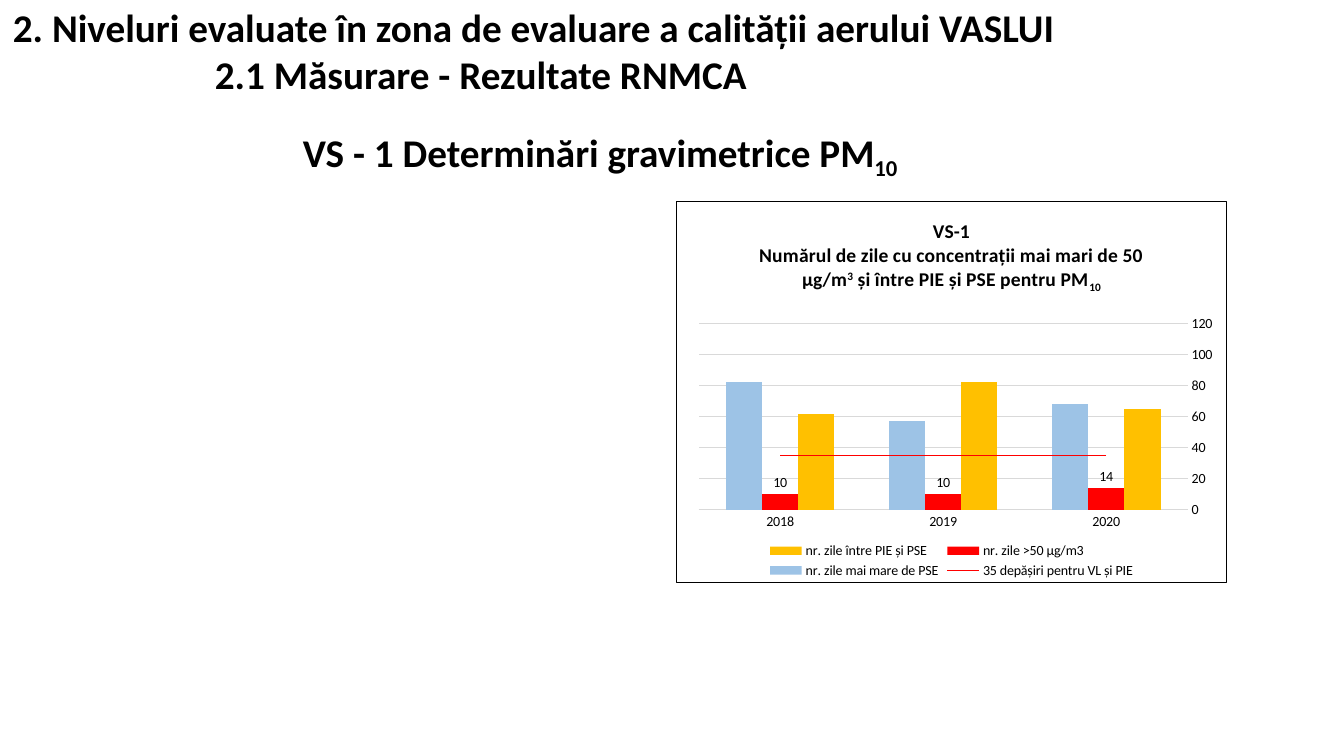
"""Build the VASLUI air quality slide: headings and the VS-1 PM10 chart."""
from pptx import Presentation
from pptx.chart.data import CategoryChartData
from pptx.dml.color import RGBColor
from pptx.enum.chart import (XL_CHART_TYPE as Chart, XL_LABEL_POSITION as LabelPos,
                             XL_LEGEND_POSITION as LegendPos, XL_MARKER_STYLE as Marker,
                             XL_TICK_MARK as Tick)
from pptx.enum.text import MSO_AUTO_SIZE as AutoSize
from pptx.oxml import parse_xml
from pptx.oxml.ns import nsdecls, qn
from pptx.util import Emu, Pt
from dataclasses import dataclass

HEADINGS = [
    ((3, -2, 1343, 105), [
        (0, [("2. Niveluri evaluate în zona de evaluare a calității aerului VASLUI", 0)]),
        (202, [("2.1 Măsurare - Rezultate RNMCA", 0)]),
    ]),
    ((293, 123, 644, 57), [(0, [("VS - 1 Determinări gravimetrice PM", 0), ("10", -25)])]),
]
CHART_BOX = (676, 201, 551, 382)
CHART_TITLE = [
    [("VS-1", 0)],
    [("Numărul de zile cu concentrații mai mari de 50 µg/m", 0), ("3", 30),
     (" și între PIE și PSE pentru PM", 0), ("10", -25)],
]
YEARS = ["2020", "2019", "2018"]
SERIES = [
    ("nr. zile între PIE și PSE", (65, 82, 62), "between"),
    ("nr. zile >50 µg/m3", (14, 10, 10), "exceeded"),
    ("nr. zile mai mare de PSE", (68, 57, 82), "above"),
    ("35 depășiri pentru VL și PIE", (35, 35, 35), "exceeded"),
]
PLOT_AREA = {"x": 0.04, "y": 0.32, "w": 0.89, "h": 0.49}


@dataclass(frozen=True)
class Theme:
    font: str = "Calibri"
    text: str = "000000"
    paper: str = "FFFFFF"
    grid: str = "D9D9D9"
    between: str = "FFC000"
    exceeded: str = "FF0000"
    above: str = "9DC3E6"
    heading: int = 28
    title: int = 14
    label: int = 10
    thin: float = 0.75


THEME = Theme()


def px(n):
    return Emu(round(n * 914400 / 100.8))


def rgb(name):
    return RGBColor.from_string(getattr(THEME, name))


def set_font(font, size, bold=False):
    font.name, font.size, font.bold = THEME.font, Pt(size), bold
    font.color.rgb = rgb("text")


def add_runs(p, runs, size):
    for text, baseline in runs:
        r = p.add_run()
        r.text = text
        if baseline:
            r.font._element.set("baseline", str(baseline * 1000))
    set_font(p.font, size, True)


def set_line(line, color):
    line.color.rgb, line.width = rgb(color), Pt(THEME.thin)


def add_heading(s, box, paragraphs):
    tf = s.shapes.add_textbox(*map(px, box)).text_frame
    tf.word_wrap, tf.auto_size = True, AutoSize.SHAPE_TO_FIT_TEXT
    for i, (indent, runs) in enumerate(paragraphs):
        p = tf.add_paragraph() if i else tf.paragraphs[0]
        if indent:
            p._p.get_or_add_pPr().set("marL", str(px(indent)))
        add_runs(p, runs, THEME.heading)


def style_axes(chart):
    years, days = chart.category_axis, chart.value_axis
    years.reverse_order = True
    set_line(years.format.line, "grid")
    days.minimum_scale, days.maximum_scale, days.major_unit = 0, 120, 20
    days.format.line.fill.background()
    set_line(days.major_gridlines.format.line, "grid")
    for axis in (years, days):
        axis.major_tick_mark = axis.minor_tick_mark = Tick.NONE


def move_limit_to_line(bars):
    bar_xml = bars._element
    ser = bar_xml.findall(qn("c:ser"))[-1]
    for invert in ser.findall(qn("c:invertIfNegative")):
        ser.remove(invert)
    axis_ids = "".join(f'<c:axId val="{a.get("val")}"/>' for a in bar_xml.findall(qn("c:axId")))
    line_xml = parse_xml(f'<c:lineChart {nsdecls("c")}><c:grouping val="standard"/>'
                         f'<c:varyColors val="0"/><c:marker val="1"/>{axis_ids}</c:lineChart>')
    line_xml.insert(2, ser)
    bar_xml.addnext(line_xml)


def set_frame(chart):
    space = chart._chartSpace
    area = space.find(qn("c:chart")).find(qn("c:plotArea"))
    for layout in area.findall(qn("c:layout")):
        area.remove(layout)
    modes = "".join(f'<c:{k}Mode val="edge"/>' for k in "xy")
    sizes = "".join(f'<c:{k} val="{v}"/>' for k, v in PLOT_AREA.items())
    area.insert(0, parse_xml(f'<c:layout {nsdecls("c")}><c:manualLayout><c:layoutTarget val="inner"/>'
                             f'{modes}{sizes}</c:manualLayout></c:layout>'))
    space.find(qn("c:chart")).addnext(parse_xml(
        f'<c:spPr {nsdecls("c", "a")}><a:solidFill><a:srgbClr val="{THEME.paper}"/></a:solidFill>'
        f'<a:ln w="{Pt(1)}"><a:solidFill><a:srgbClr val="{THEME.text}"/></a:solidFill></a:ln></c:spPr>'))


def add_days_chart(s):
    data = CategoryChartData(number_format="0")
    data.categories = YEARS
    for name, values, _ in SERIES:
        data.add_series(name, values)
    chart = s.shapes.add_chart(Chart.COLUMN_CLUSTERED, *map(px, CHART_BOX), data).chart
    set_font(chart.font, THEME.label)
    tf = chart.chart_title.text_frame
    for i, runs in enumerate(CHART_TITLE):
        add_runs(tf.add_paragraph() if i else tf.paragraphs[0], runs, THEME.title)
    chart.has_legend = True
    chart.legend.position, chart.legend.include_in_layout = LegendPos.BOTTOM, False
    set_font(chart.legend.font, THEME.label)
    style_axes(chart)

    bars = chart.plots[0]
    bars.gap_width, bars.overlap, bars.vary_by_categories = 150, 0, False
    move_limit_to_line(bars)
    for ser, (_, _, color) in zip(bars.series, SERIES):
        ser.format.fill.solid()
        ser.format.fill.fore_color.rgb = rgb(color)
    labels = bars.series[1].data_labels
    labels.show_value, labels.position = True, LabelPos.OUTSIDE_END
    set_font(labels.font, THEME.label)
    limit = chart.plots[1].series[0]
    set_line(limit.format.line, SERIES[-1][2])
    limit.marker.style, limit.smooth = Marker.NONE, False
    set_frame(chart)


def main():
    prs = Presentation()
    prs.slide_width, prs.slide_height = px(1344), px(756)
    s = prs.slides.add_slide(prs.slide_layouts[6])
    for box, paragraphs in HEADINGS:
        add_heading(s, box, paragraphs)
    add_days_chart(s)
    prs.save("out.pptx")


if __name__ == "__main__":
    main()
